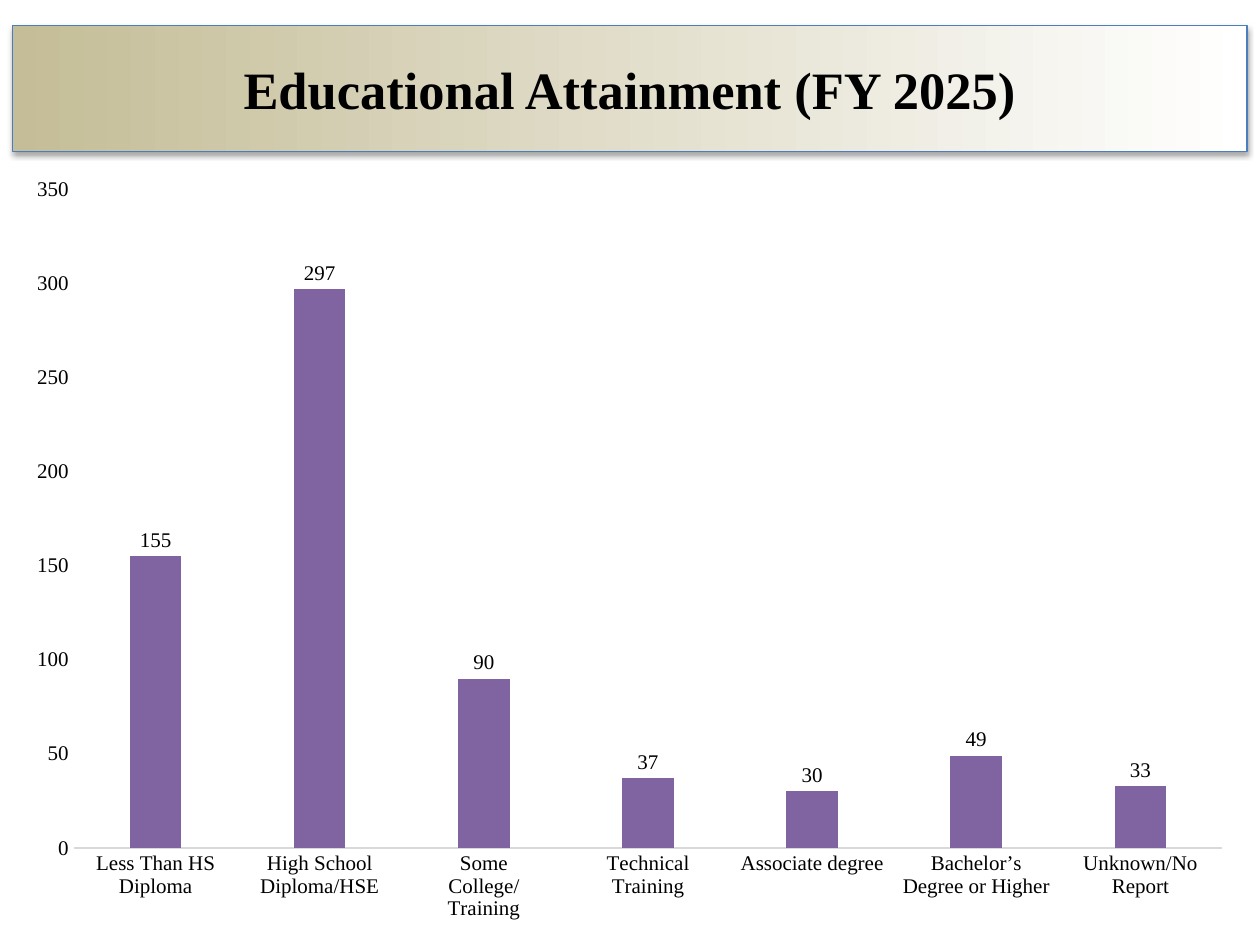
"""Build the educational attainment slide with a title banner and a column chart."""
import pptx
import pptx.chart.data
import pptx.dml.color
import pptx.enum.chart
import pptx.enum.text
import pptx.oxml
import pptx.oxml.ns
import pptx.util
from pptx.util import Cm

FONT = "Times New Roman"
COLORS = {
    "text": "000000",
    "tan": "C4BD97",
    "white": "FFFFFF",
    "border": "4B7EBC",
    "axis": "D9D9D9",
    "bar": "8064A2",
}
ATTAINMENT = {
    "Less Than HS Diploma": 155,
    "High School Diploma/HSE": 297,
    "Some College/Training": 90,
    "Technical Training": 37,
    "Associate degree": 30,
    "Bachelor’s Degree or Higher": 49,
    "Unknown/No Report": 33,
}


def rgb(name):
    return pptx.dml.color.RGBColor.from_string(COLORS[name])


def style_font(font, size, bold=False):
    font.name = FONT
    font.size = pptx.util.Pt(size)
    font.bold = bold
    font.color.rgb = rgb("text")


def place(sp, left, top, width, height):
    sp.left, sp.top, sp.width, sp.height = Cm(left), Cm(top), Cm(width), Cm(height)


def add_shadow(sp):
    effects = pptx.oxml.parse_xml(
        f'<a:effectLst {pptx.oxml.ns.nsdecls("a")}>'
        '<a:outerShdw blurRad="40000" dist="23000" dir="5400000" rotWithShape="0">'
        f'<a:srgbClr val="{COLORS["text"]}"><a:alpha val="35000"/></a:srgbClr>'
        "</a:outerShdw></a:effectLst>"
    )
    sp._element.spPr.append(effects)


def format_title(sp, text):
    place(sp, 0.25, 0.51, 24.89, 2.54)
    sp.fill.gradient()
    sp.fill.gradient_angle = 0
    for stop, name, position in zip(sp.fill.gradient_stops, ("tan", "white"), (0, 1)):
        stop.color.rgb = rgb(name)
        stop.position = position
    sp.line.color.rgb = rgb("border")
    sp.line.width = pptx.util.Pt(0.75)
    add_shadow(sp)
    tf = sp.text_frame
    tf.vertical_anchor = pptx.enum.text.MSO_ANCHOR.MIDDLE
    p = tf.paragraphs[0]
    p.alignment = pptx.enum.text.PP_ALIGN.CENTER
    r = p.add_run()
    r.text = text
    style_font(r.font, 30, bold=True)


def format_axis(axis):
    axis.has_major_gridlines = False
    axis.major_tick_mark = pptx.enum.chart.XL_TICK_MARK.NONE
    axis.minor_tick_mark = pptx.enum.chart.XL_TICK_MARK.NONE
    style_font(axis.tick_labels.font, 12)


def add_column_chart(s, values):
    data = pptx.chart.data.CategoryChartData()
    data.categories = list(values)
    data.add_series("Series 1", list(values.values()))
    chart = s.shapes.add_chart(
        pptx.enum.chart.XL_CHART_TYPE.COLUMN_CLUSTERED,
        Cm(0.25), Cm(3.3), Cm(24.89), Cm(15.24), data,
    ).chart
    chart.has_legend = False
    chart.has_title = False
    style_font(chart.font, 12)
    format_axis(chart.category_axis)
    format_axis(chart.value_axis)
    chart.category_axis.format.line.color.rgb = rgb("axis")
    chart.category_axis.format.line.width = pptx.util.Pt(0.75)
    chart.value_axis.format.line.fill.background()
    chart.value_axis.minimum_scale = 0
    chart.value_axis.maximum_scale = 350
    chart.value_axis.major_unit = 50
    plot = chart.plots[0]
    plot.gap_width = 219
    plot.overlap = -27
    plot.vary_by_categories = False
    series = plot.series[0]
    series.format.fill.solid()
    series.format.fill.fore_color.rgb = rgb("bar")
    labels = series.data_labels
    labels.show_value = True
    labels.position = pptx.enum.chart.XL_LABEL_POSITION.OUTSIDE_END
    style_font(labels.font, 12)


def main():
    prs = pptx.Presentation()
    prs.slide_width, prs.slide_height = Cm(25.4), Cm(19.05)
    s = prs.slides.add_slide(prs.slide_layouts[5])
    format_title(s.shapes.title, "Educational Attainment (FY 2025)")
    add_column_chart(s, ATTAINMENT)
    prs.save("out.pptx")


if __name__ == "__main__":
    main()
